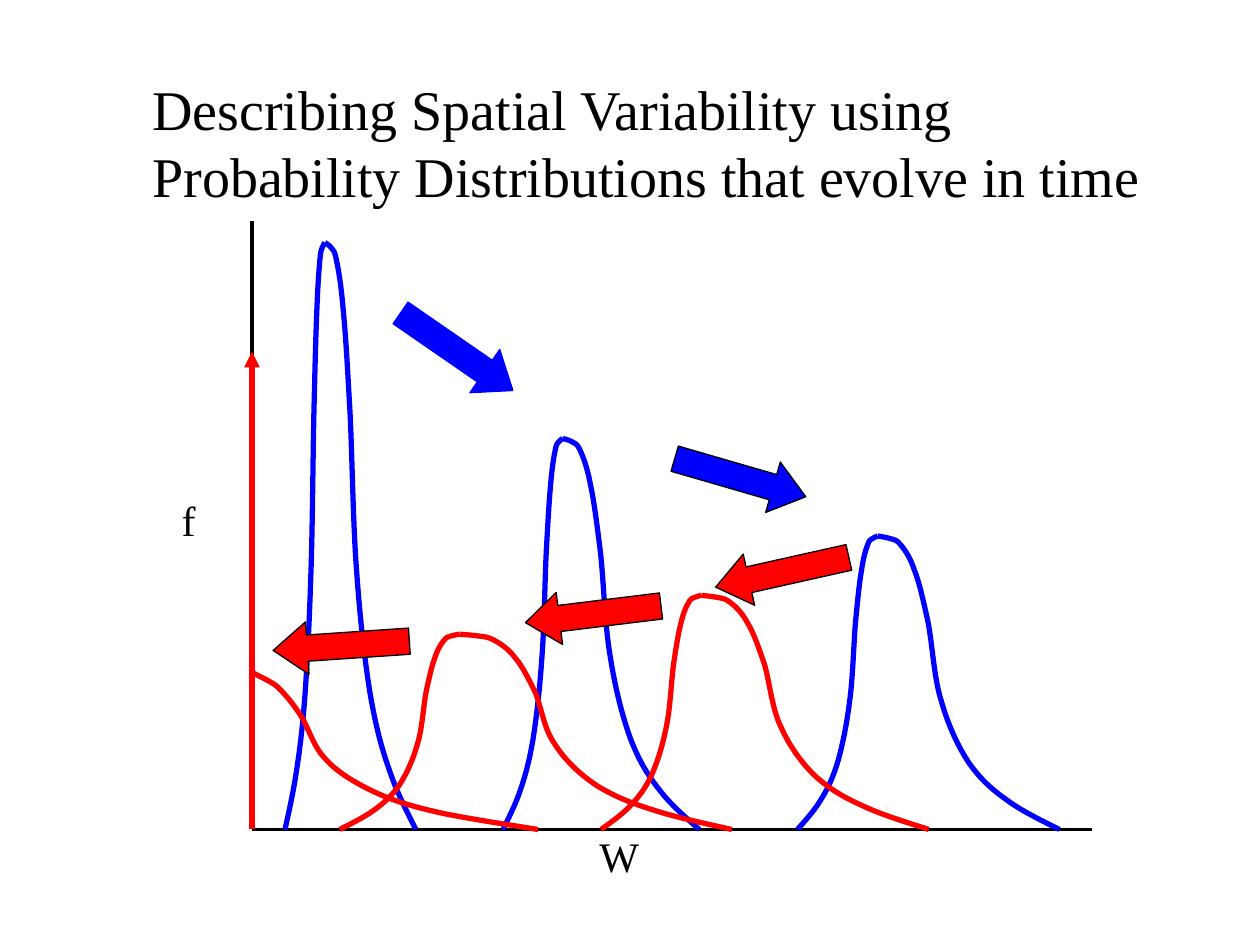
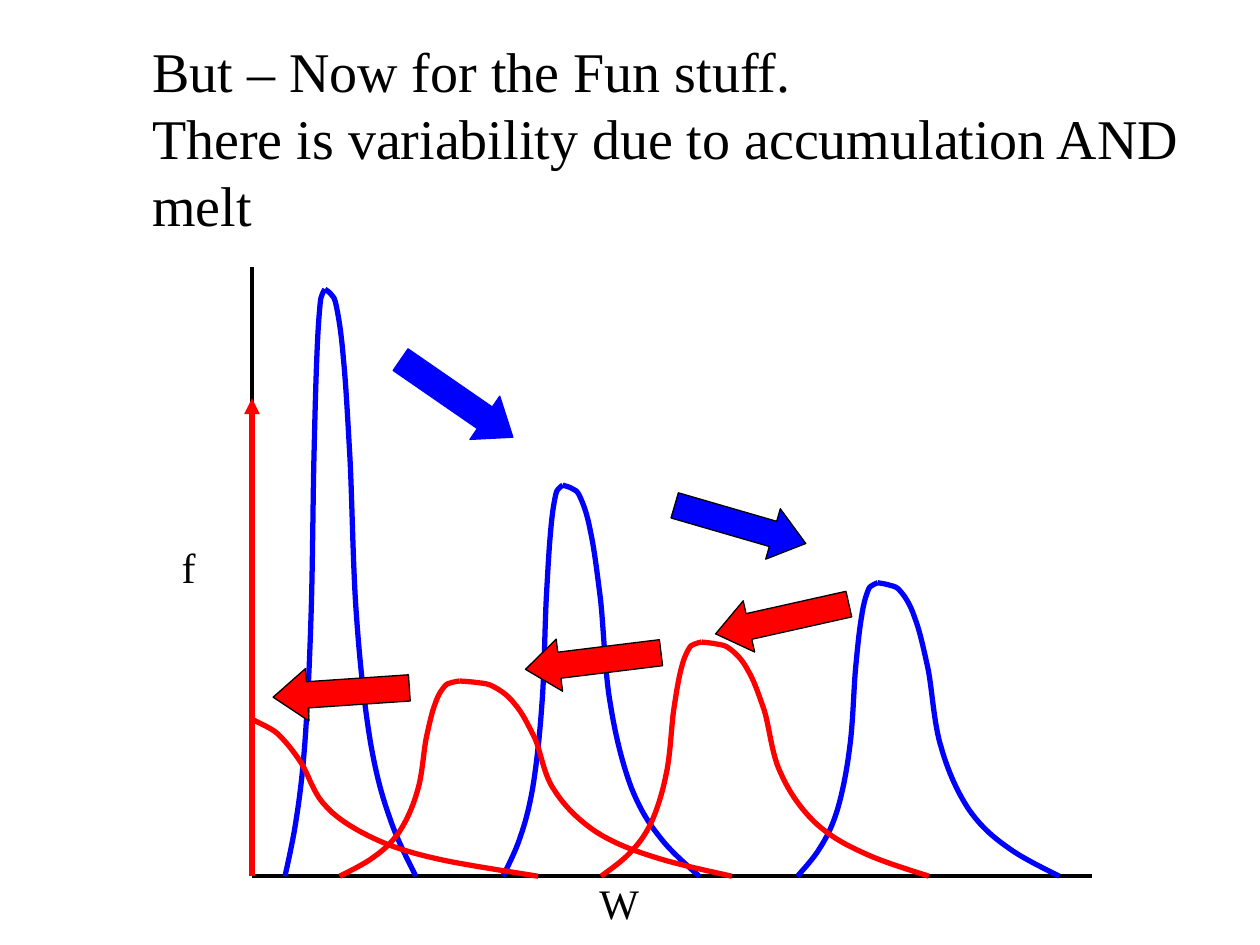
from dataclasses import dataclass
from itertools import pairwise

from lxml.etree import SubElement
from pptx import Presentation
from pptx.dml.color import RGBColor
from pptx.enum.shapes import MSO_CONNECTOR, MSO_SHAPE
from pptx.enum.text import MSO_ANCHOR, MSO_AUTO_SIZE, PP_ALIGN
from pptx.oxml.ns import qn
from pptx.shapes.autoshape import Shape
from pptx.shapes.group import GroupShape
from pptx.slide import Slide
from pptx.text.text import TextFrame
from pptx.util import Emu, Inches, Pt

COLUMNS = 24
WIDTH, HEIGHT = Inches(10), Inches(7.5)
CELL = WIDTH / COLUMNS
FONT = "Times New Roman"
BLACK, BLUE, RED = "000000", "0000FF", "FF0000"
AXIS_LEFT, AXIS_RIGHT, AXIS_TOP, BASE = 4.8, 20.8, 4.2, 15.8
SPIKE_TOP = 6.7

Point = tuple[float, float]

FLANK: list[Point] = [
    (100, 0), (95.4, 1.5), (79.7, 6), (71.4, 9.9),
    (63.1, 13.5), (56.7, 17), (50.2, 22.7),
    (44.2, 28.3), (38.7, 35.6), (35, 43.8),
    (30.9, 51.7), (30, 63.7), (27.6, 71),
    (24.9, 78.5), (23, 83.9), (20.3, 88.2),
    (18, 92.5), (15.2, 95.1), (12.9, 96.8),
    (10.6, 98.7), (9.2, 98.7), (6.9, 99.1),
    (4.6, 99.6), (1.4, 99.8), (0, 100),
]
DECAY: list[Point] = [
    (100, 0), (94.7, 1.6), (77.1, 6.4), (67.4, 10),
    (58.1, 13.6), (50.2, 17.6), (43.2, 23.5),
    (36.1, 29.5), (29.5, 36.7), (25.6, 45),
    (21.1, 53.4), (19.8, 65.3), (16.7, 73.3),
    (14.1, 80.5), (11.5, 86.1), (8.8, 90.8),
    (6.2, 94.8), (1.3, 98), (0, 100),
]


@dataclass(frozen=True)
class Hump:
    left: float
    peak: float
    right: float
    height: float
    colour: str


@dataclass(frozen=True)
class Arrow:
    left: float
    top: float
    angle: float
    fill: str
    outline: str = BLACK


@dataclass(frozen=True)
class Label:
    text: str
    left: float
    top: float
    width: float


@dataclass(frozen=True)
class Page:
    title: str
    title_top: float
    plot_drop: float


HUMPS = [
    Hump(5.43, 6.19, 7.92, 11.18, BLUE),
    Hump(9.58, 10.72, 13.32, 7.45, BLUE),
    Hump(15.19, 16.72, 20.18, 5.59, BLUE),
    Hump(11.45, 13.36, 17.69, 4.46, RED),
    Hump(6.47, 8.75, 13.94, 3.72, RED),
]
ARROWS = [
    Arrow(7.4, 6.2, 34.6, BLUE, BLUE),
    Arrow(12.8, 8.6, 16.2, BLUE),
    Arrow(5.2, 11.8, 176.1, RED),
    Arrow(10, 11.2, 173, RED),
    Arrow(13.6, 10.4, 167.4, RED),
]
LABELS = [Label("W", 11.17, 15.7, 1.25), Label("f", 3.22, 9.3, 0.74)]
PAGES = [
    Page("Describing Spatial Variability using Probability Distributions "
         "that evolve in time", 0.79, 0),
    Page("But – Now for the Fun stuff.\v"
         "There is variability due to accumulation AND melt", 1.34, 0.89),
]


def cells(count: float) -> Emu:
    return Emu(round(count * CELL))


def rgb(colour: str) -> RGBColor:
    return RGBColor.from_string(colour)


def write(frame: TextFrame, text: str, size: int, align: PP_ALIGN) -> None:
    frame.text = text
    para = frame.paragraphs[0]
    para.alignment = align
    para.font.name = FONT
    para.font.size = Pt(size)
    para.font.color.rgb = rgb(BLACK)
    for span in para.runs:
        span.font._element.set("kern", "0")


def bend(curve: Shape) -> None:
    outline = next(curve._element.iter(qn("a:path")))
    segments = outline.findall(qn("a:lnTo"))
    for start in range(0, len(segments), 3):
        bezier = SubElement(outline, qn("a:cubicBezTo"))
        for segment in segments[start:start + 3]:
            bezier.append(segment[0])
            outline.remove(segment)


def draw_curve(plot: GroupShape, profile: list[Point], foot: float,
               crest: float, height: float, colour: str) -> None:
    points = [(cells(crest + (foot - crest) * x / 100),
               cells(BASE - height * y / 100)) for x, y in profile]
    builder = plot.shapes.build_freeform(*points[0])
    builder.add_line_segments(points[1:], close=False)
    curve = builder.convert_to_shape()
    bend(curve)
    curve.shadow.inherit = False
    curve.fill.background()
    curve.line.color.rgb = rgb(colour)
    curve.line.width = Pt(3)


def draw_line(plot: GroupShape, start: Point, end: Point, colour: str,
              width: float, arrowhead: bool = False) -> None:
    line = plot.shapes.add_connector(
        MSO_CONNECTOR.STRAIGHT, *map(cells, start), *map(cells, end))
    line.line.color.rgb = rgb(colour)
    line.line.width = Pt(width)
    if arrowhead:
        SubElement(line.line._get_or_add_ln(), qn("a:tailEnd"), type="triangle")
    SubElement(line._element.spPr, qn("a:effectLst"))


def draw_arrow(plot: GroupShape, arrow: Arrow) -> None:
    shape = plot.shapes.add_shape(
        MSO_SHAPE.RIGHT_ARROW, cells(arrow.left), cells(arrow.top),
        cells(2.6), cells(1))
    shape.adjustments[0] = 0.5
    shape.adjustments[1] = 0.65
    shape.rotation = arrow.angle
    shape.shadow.inherit = False
    shape.fill.solid()
    shape.fill.fore_color.rgb = rgb(arrow.fill)
    shape.line.color.rgb = rgb(arrow.outline)
    shape.line.width = Pt(0.75)


def draw_label(plot: GroupShape, label: Label) -> None:
    box = plot.shapes.add_textbox(
        cells(label.left), cells(label.top), cells(label.width), cells(1.2))
    box.text_frame.word_wrap = False
    box.text_frame.auto_size = MSO_AUTO_SIZE.SHAPE_TO_FIT_TEXT
    write(box.text_frame, label.text, 24, PP_ALIGN.CENTER)


def draw_plot(slide: Slide, drop: float) -> None:
    plot = slide.shapes.add_group_shape()
    corners = [(AXIS_LEFT, AXIS_TOP), (AXIS_LEFT, BASE), (AXIS_RIGHT, BASE)]
    for start, end in pairwise(corners):
        draw_line(plot, start, end, BLACK, 2)
    for hump in HUMPS:
        for foot in (hump.left, hump.right):
            draw_curve(plot, FLANK, foot, hump.peak, hump.height, hump.colour)
    draw_curve(plot, DECAY, 10.25, AXIS_LEFT, 3, RED)
    draw_line(plot, (AXIS_LEFT, BASE), (AXIS_LEFT, SPIKE_TOP), RED, 3, True)
    for arrow in ARROWS:
        draw_arrow(plot, arrow)
    for label in LABELS:
        draw_label(plot, label)
    plot.top = plot.top + cells(drop)


def draw_title(slide: Slide, page: Page) -> None:
    title = slide.shapes.title
    title.left, title.top = cells(2.66), cells(page.title_top)
    title.width, title.height = cells(20.4), cells(3.31)
    frame = title.text_frame
    frame.word_wrap = True
    frame.auto_size = MSO_AUTO_SIZE.NONE
    frame.vertical_anchor = MSO_ANCHOR.BOTTOM
    write(frame, page.title, 32, PP_ALIGN.LEFT)


def main() -> None:
    deck = Presentation()
    deck.slide_width, deck.slide_height = WIDTH, HEIGHT
    title_only = deck.slide_layouts[5]
    for page in PAGES:
        slide = deck.slides.add_slide(title_only)
        draw_title(slide, page)
        draw_plot(slide, page.plot_drop)
    deck.save("out.pptx")


if __name__ == "__main__":
    main()
